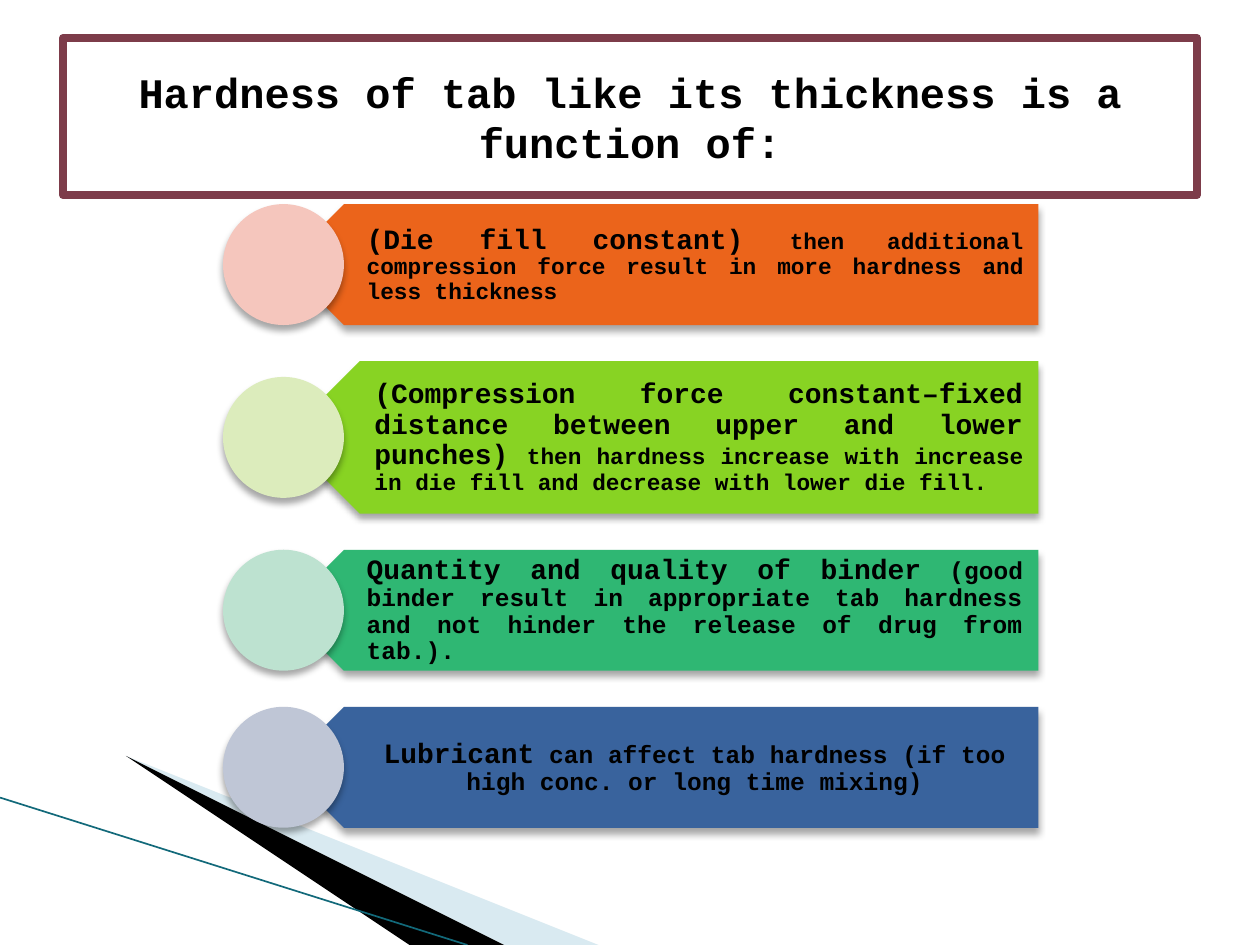
from lxml import etree
from pptx import Presentation
from pptx import util as u
from pptx.dml.color import RGBColor
from pptx.enum import shapes, text
from pptx.oxml import ns

BLACK = RGBColor(0x00, 0x00, 0x00)
WHITE = RGBColor(0xFF, 0xFF, 0xFF)
MAROON = RGBColor(0x7D, 0x3C, 0x4A)
PALE_BLUE = RGBColor(0xA0, 0xCB, 0xDC)
TEAL = RGBColor(0x12, 0x69, 0x7A)
ORANGE, PINK = RGBColor(0xEB, 0x64, 0x1B), RGBColor(0xF5, 0xC6, 0xBD)
LIME, PALE_LIME = RGBColor(0x88, 0xD3, 0x23), RGBColor(0xDC, 0xEC, 0xBC)
GREEN, MINT = RGBColor(0x2F, 0xB7, 0x73), RGBColor(0xBD, 0xE2, 0xD0)
BLUE, GREY_BLUE = RGBColor(0x39, 0x63, 0x9D), RGBColor(0xBF, 0xC6, 0xD6)
FONT = "Courier New"

deck = Presentation()
deck.slide_width, deck.slide_height = u.Inches(10), u.Inches(7.5)
slide = deck.slides.add_slide(deck.slide_layouts[6])
parts = slide.shapes


def add_effect(element, tag, **attributes):
    effects = etree.SubElement(element.spPr, ns.qn("a:effectLst"))
    if tag:
        return etree.SubElement(effects, ns.qn(tag), **attributes)


def add_solid(kind, left, top, width, height, colour):
    solid = parts.add_shape(kind, *map(u.Inches, (left, top, width, height)))
    solid.fill.solid()
    solid.fill.fore_color.rgb = colour
    solid.line.fill.background()
    return solid


# Corner wedges, with the pale one see-through
wedges = [
    (PALE_BLUE, 40, [(0.55, 6.5), (5.95, 7.5), (4.56, 7.5)]),
    (BLACK, 100, [(0.53, 6.49), (4.57, 7.5), (3.72, 7.5)]),
]
for colour, opacity, (start, *others) in wedges:
    outline = parts.build_freeform(*start, scale=u.Inches(1))
    outline.add_line_segments(others, close=True)
    wedge = outline.convert_to_shape()
    wedge.shadow.inherit = False
    wedge.fill.solid()
    wedge.fill.fore_color.rgb = colour
    wedge.line.fill.background()
    if opacity < 100:
        tint = wedge.element.spPr.find(".//" + ns.qn("a:srgbClr"))
        etree.SubElement(tint, ns.qn("a:alpha"), val=str(opacity * 1000))

edge = parts.add_connector(shapes.MSO_CONNECTOR.STRAIGHT, 0, u.Inches(6.33),
                           u.Inches(3.71), u.Inches(7.5))
edge.line.color.rgb = TEAL
edge.line.width = u.Pt(0.95)
add_effect(edge.element, None)

# Factors: bar colour, circle colour, height, alignment, lead, detail, detail size
JUSTIFY, CENTER = text.PP_ALIGN.JUSTIFY, text.PP_ALIGN.CENTER
factors = [
    (ORANGE, PINK, 0.96, JUSTIFY, "(Die fill constant) ",
     "then additional compression force result in more hardness and less thickness", 13),
    (LIME, PALE_LIME, 1.21, JUSTIFY,
     "(Compression force constant–fixed distance between upper and lower punches) ",
     "then hardness increase with increase in die fill and decrease with lower die fill.", 13),
    (GREEN, MINT, 0.96, JUSTIFY, "Quantity and quality of binder",
     " (good binder result in appropriate tab hardness and not hinder the release "
     "of drug from tab.).", 14),
    (BLUE, GREY_BLUE, 0.96, CENTER, "Lubricant",
     " can affect tab hardness (if too high conc. or long time mixing)", 14),
]
BAR_LEFT, BAR_WIDTH = 2.25, 5.99
CIRCLE_LEFT, CIRCLE_SIZE = 1.77, 0.96
LIST_TOP, LIST_BOTTOM = 1.62, 6.57
gap = (LIST_BOTTOM - LIST_TOP - sum(f[2] for f in factors)) / (len(factors) - 1)

top = LIST_TOP
for bar_colour, circle_colour, height, align, lead, detail, detail_size in factors:
    bar = add_solid(shapes.MSO_SHAPE.PENTAGON, BAR_LEFT, top, BAR_WIDTH, height, bar_colour)
    bar.rotation = 180

    # The wording starts halfway along the bar's point
    inset = height / 4
    wording = parts.add_textbox(u.Inches(BAR_LEFT + inset), u.Inches(top),
                                u.Inches(BAR_WIDTH - inset), u.Inches(height))
    frame = wording.text_frame
    frame.word_wrap = True
    frame.vertical_anchor = text.MSO_ANCHOR.MIDDLE
    frame.margin_left, frame.margin_right = u.Inches(0.42), u.Inches(0.12)
    frame.margin_top = frame.margin_bottom = u.Inches(0.07)
    factor = frame.paragraphs[0]
    factor.alignment = align
    factor.line_spacing = 0.9
    factor.font.name, factor.font.bold = FONT, True
    factor.font.color.rgb = BLACK
    for words, size in ((lead, 16), (detail, detail_size)):
        run = factor.add_run()
        run.text = words
        run.font.size = u.Pt(size)

    circle = add_solid(shapes.MSO_SHAPE.OVAL, CIRCLE_LEFT, top + (height - CIRCLE_SIZE) / 2,
                       CIRCLE_SIZE, CIRCLE_SIZE, circle_colour)
    for raised in (bar, circle):
        shadow = add_effect(raised.element, "a:outerShdw", blurRad=str(u.Pt(4)),
                            dist=str(u.Pt(3)), dir="5400000", rotWithShape="0")
        shade = etree.SubElement(shadow, ns.qn("a:srgbClr"), val=str(BLACK))
        etree.SubElement(shade, ns.qn("a:alpha"), val="35000")
    top += height + gap

# Title
title = add_solid(shapes.MSO_SHAPE.RECTANGLE, 0.5, 0.3, 9, 1.25, WHITE)
title.shadow.inherit = False
title.line.color.rgb = MAROON
title.line.width = u.Pt(4.33)
title.text_frame.word_wrap = True
title.text_frame.vertical_anchor = text.MSO_ANCHOR.MIDDLE
heading = title.text_frame.paragraphs[0]
heading.text = "Hardness of tab like its thickness is a function of:"
heading.alignment = CENTER
heading.font.name, heading.font.size, heading.font.bold = FONT, u.Pt(24), True
heading.font.color.rgb = BLACK

deck.save("out.pptx")
